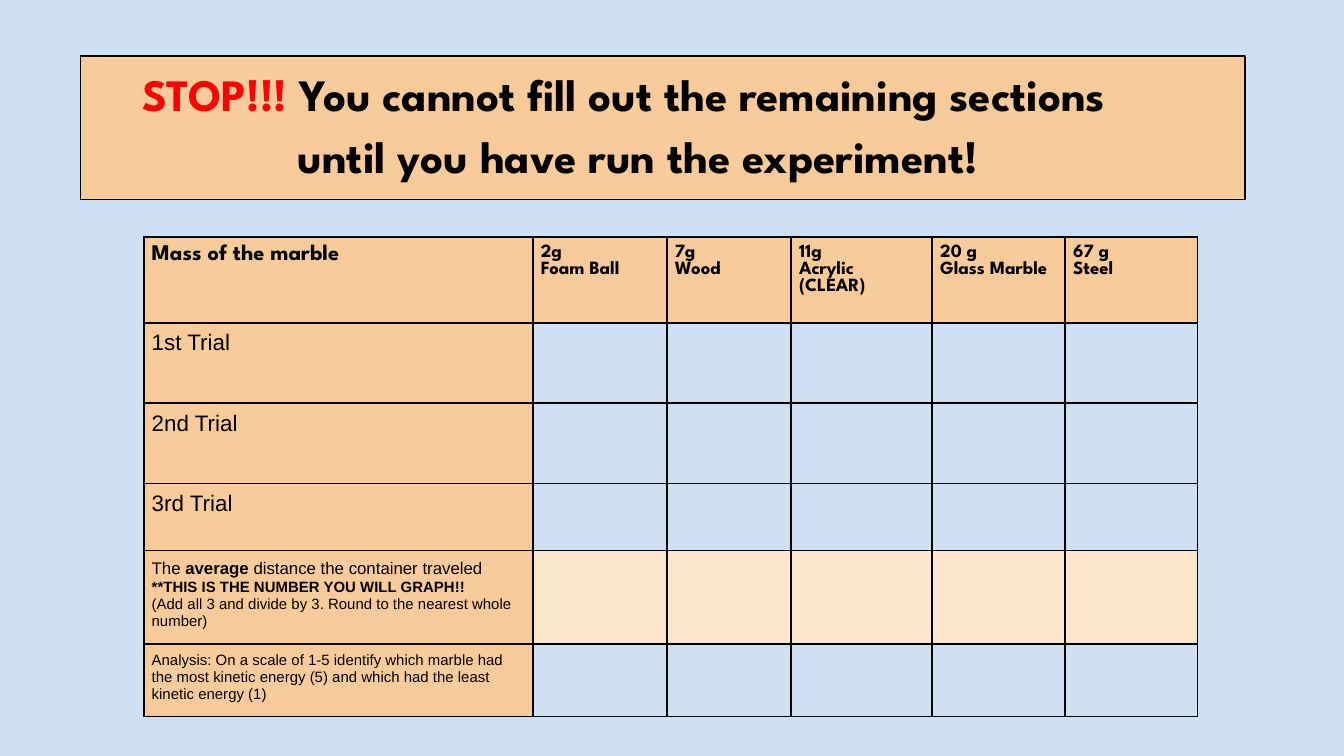
from lxml import etree
from pptx import Presentation
from pptx.dml.color import RGBColor
from pptx.enum.text import MSO_ANCHOR, MSO_AUTO_SIZE, PP_ALIGN
from pptx.oxml.ns import qn
from pptx.util import Pt

TOP, LEFT = MSO_ANCHOR.TOP, PP_ALIGN.LEFT
NO_AUTOFIT = MSO_AUTO_SIZE.NONE
TITLE_LAYOUT = 5

COLORS = {"sky": "CEE1F3", "orange": "F9CB9B", "peach": "FCE4CD",
          "black": "000000", "red": "FF0000"}
HEADING, BODY = "League Spartan", "Arial"

# Content
WARNING = [("STOP!!! ", "red"),
           ("You cannot ﬁll out the remaining sections until you have run the experiment!",
            "black")]

# Marble heading: paragraphs, right margin that makes the material wrap
MARBLES = [
    (["2g", "Foam Ball"], 0),
    (["7g Wood"], 30),
    (["11g Acrylic (CLEAR)"], 32),
    (["20 g", "Glass Marble"], 0),
    (["67 g Steel"], 32),
]

# Row label paragraphs: runs as (text, bold), size, line spacing
TRIALS = [[([(f"{trial} Trial", False)], 12, None)] for trial in ("1st", "2nd", "3rd")]
AVERAGE = [
    ([("The ", False), ("average ", True), ("distance the container traveled", False)],
     9, Pt(10.7)),
    ([("**THIS IS THE NUMBER YOU WILL GRAPH!!", True)], 8, Pt(9.4)),
    ([("(Add all 3 and divide by 3. Round to the nearest whole number)", False)], 8, 1.02),
]
ANALYSIS = [
    ([("Analysis: On a scale of 1-5 identify which marble had the most kinetic energy (5) "
       "and which had the least kinetic energy (1)", False)], 8, 1.02),
]
MASS = [([("Mass of the marble", True)], 12, None)]

# Label, row height, fill of the answer cells
ROWS = [
    (MASS, 46, "orange"),
    (TRIALS[0], 43, None),
    (TRIALS[1], 43, None),
    (TRIALS[2], 36, None),
    (AVERAGE, 50, "peach"),
    (ANALYSIS, 39, None),
]
COLUMN_WIDTHS = [208.5, 71.8, 66.6, 75.6, 71.2, 71]
LABEL_RIGHT_MARGIN = 10


def rgb(name):
    return RGBColor.from_string(COLORS[name])


def add_borders(cell):
    """Draw a 1 pt black line on all four sides."""
    properties = cell._tc.get_or_add_tcPr()
    for position, side in enumerate(("lnL", "lnR", "lnT", "lnB")):
        line = etree.Element(qn(f"a:{side}"), w=str(Pt(1)))
        fill = etree.SubElement(line, qn("a:solidFill"))
        etree.SubElement(fill, qn("a:srgbClr"), val=COLORS["black"])
        properties.insert(position, line)


def write_cell(cell, paragraphs, font_name, right_margin):
    cell.margin_left, cell.margin_right = Pt(4.3), Pt(right_margin)
    cell.margin_top, cell.margin_bottom = Pt(4.1), 0
    for index, (runs, size, spacing) in enumerate(paragraphs):
        frame = cell.text_frame
        paragraph = frame.add_paragraph() if index else frame.paragraphs[0]
        paragraph.space_before = Pt(0 if index else 4)
        if spacing:
            paragraph.line_spacing = spacing
        paragraph.font.name, paragraph.font.size = font_name, Pt(size)
        paragraph.font.color.rgb = rgb("black")
        for text, bold in runs:
            run = paragraph.add_run()
            run.text, run.font.bold = text, bold


def add_warning(slide):
    title = slide.shapes.title
    title.left, title.top, title.width, title.height = Pt(43), Pt(30), Pt(624), Pt(77)
    title.fill.solid()
    title.fill.fore_color.rgb = rgb("orange")
    title.line.color.rgb = rgb("black")
    title.line.width = Pt(0.75)
    frame = title.text_frame
    frame.auto_size, frame.word_wrap, frame.vertical_anchor = NO_AUTOFIT, True, TOP
    frame.margin_left = frame.margin_bottom = 0
    frame.margin_top, frame.margin_right = Pt(1.4), Pt(43)
    paragraph = frame.paragraphs[0]
    paragraph.alignment, paragraph.line_spacing = LEFT, 1.15
    paragraph.space_before = Pt(1.4)
    paragraph.font.name, paragraph.font.size, paragraph.font.bold = HEADING, Pt(24), True
    # Hanging indent puts the second line further right
    indents = paragraph._p.get_or_add_pPr()
    indents.set("marL", str(Pt(116.6)))
    indents.set("indent", str(Pt(-83.5)))
    for text, color in WARNING:
        run = paragraph.add_run()
        run.text = text
        run.font.color.rgb = rgb(color)


def add_results(slide):
    heights = [height for _, height, _ in ROWS]
    results = slide.shapes.add_table(
        len(ROWS), len(COLUMN_WIDTHS), Pt(77), Pt(127),
        Pt(sum(COLUMN_WIDTHS)), Pt(sum(heights))).table
    results.first_row = results.horz_banding = False
    for column, width in zip(results.columns, COLUMN_WIDTHS):
        column.width = Pt(width)

    for r, (label, height, answer_fill) in enumerate(ROWS):
        results.rows[r].height = Pt(height)
        for c, cell in enumerate(results.rows[r].cells):
            fill = answer_fill if c else "orange"
            if fill:
                cell.fill.solid()
                cell.fill.fore_color.rgb = rgb(fill)
            else:
                cell.fill.background()
            add_borders(cell)
        write_cell(results.cell(r, 0), label, BODY if r else HEADING, LABEL_RIGHT_MARGIN)

    for c, (lines, right_margin) in enumerate(MARBLES, start=1):
        heading = [([(line, True)], 10, None) for line in lines]
        write_cell(results.cell(0, c), heading, HEADING, right_margin)


def main():
    deck = Presentation()
    deck.slide_width, deck.slide_height = Pt(720), Pt(405)
    slide = deck.slides.add_slide(deck.slide_layouts[TITLE_LAYOUT])
    slide.background.fill.solid()
    slide.background.fill.fore_color.rgb = rgb("sky")
    add_warning(slide)
    add_results(slide)
    deck.save("out.pptx")


if __name__ == "__main__":
    main()
